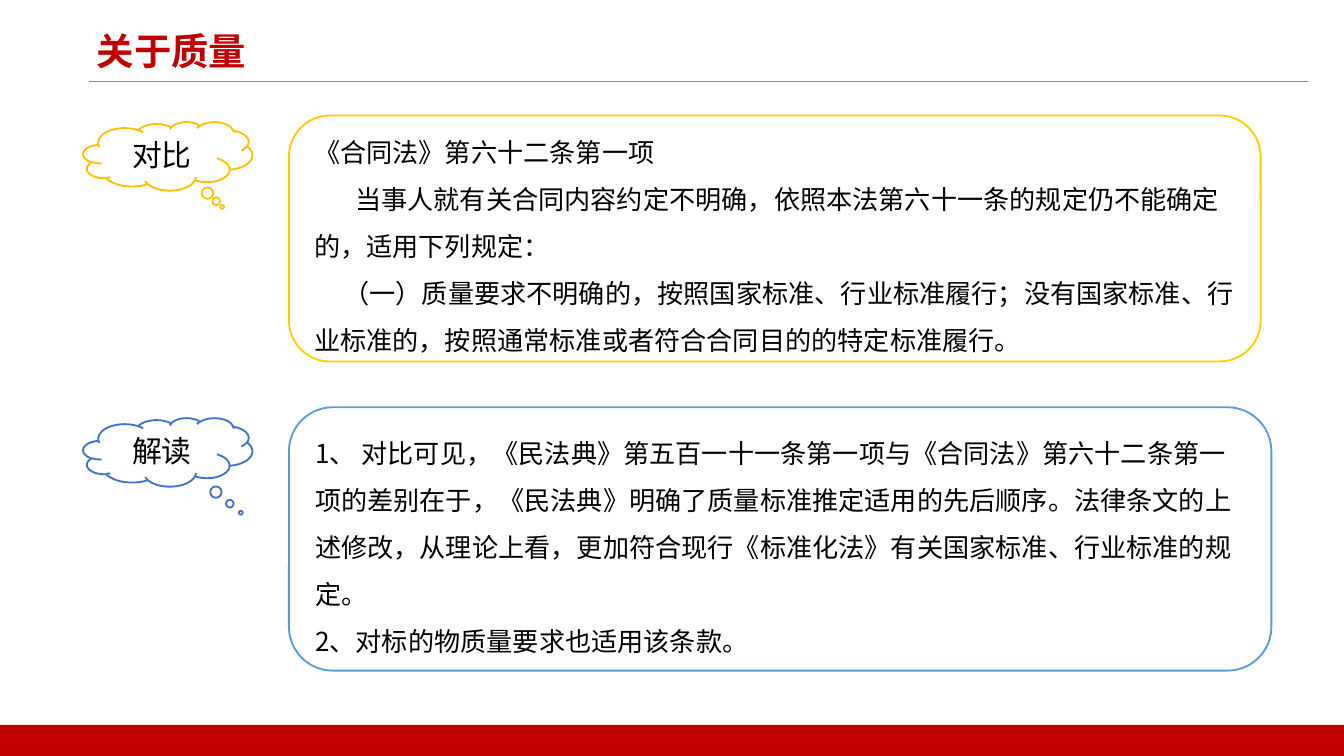
from lxml.etree import SubElement
from pptx import Presentation
from pptx.dml.color import RGBColor
from pptx.enum.shapes import MSO_CONNECTOR, MSO_SHAPE
from pptx.enum.text import MSO_ANCHOR, MSO_AUTO_SIZE, PP_ALIGN
from pptx.oxml.ns import qn
from pptx.util import Pt

FONT = "Noto Sans CJK SC"
RED = RGBColor(0xC0, 0x00, 0x00)
BLACK = RGBColor(0x00, 0x00, 0x00)
WHITE = RGBColor(0xFF, 0xFF, 0xFF)
GRAY = RGBColor(0x8C, 0x8C, 0x8C)
GOLD = RGBColor(0xFF, 0xC0, 0x00)
YELLOW = RGBColor(0xFF, 0xCC, 0x00)
BLUE = RGBColor(0x44, 0x72, 0xC4)
SKY = RGBColor(0x5B, 0x9B, 0xD5)

# Content: paragraphs are (first-line indent, text)
TITLE = "关于质量"
SECTIONS = [
    {
        "label": "对比", "cloud_top": 65.3, "tail": (0.321, 0.74), "cloud_color": GOLD,
        "panel": (61.9, 520.6, 131.8), "panel_color": YELLOW,
        "text": [
            (0, "《合同法》第六十二条第一项"),
            (22, "当事人就有关合同内容约定不明确，依照本法第六十一条的规定仍不能确定的，适用下列规定："),
            (15.7, "（一）质量要求不明确的，按照国家标准、行业标准履行；没有国家标准、行业标准的，"
                   "按照通常标准或者符合合同目的的特定标准履行。"),
        ],
    },
    {
        "label": "解读", "cloud_top": 223.9, "tail": (0.431, 0.884), "cloud_color": BLUE,
        "panel": (218.2, 526.3, 141.1), "panel_color": SKY,
        "text": [
            (0, "1、 对比可见，《民法典》第五百一十一条第一项与《合同法》第六十二条第一项的差别在于，"
                "《民法典》明确了质量标准推定适用的先后顺序。法律条文的上述修改，从理论上看，"
                "更加符合现行《标准化法》有关国家标准、行业标准的规定。"),
            (0, "2、对标的物质量要求也适用该条款。"),
        ],
    },
]
CLOUD_LEFT, CLOUD_WIDTH, CLOUD_HEIGHT = 44.6, 90.7, 36.7
PANEL_LEFT = 154.8


def format_paragraph(para, size, color, align, bold=False):
    para.alignment = align
    for span in para.runs:
        span.font.size = Pt(size)
        span.font.bold = bold
        span.font.name = FONT
        span.font.color.rgb = color
        SubElement(span.font._element, qn("a:ea"), typeface=FONT)


def add_outlined(page, kind, left, top, width, height, fill, line):
    shape = page.shapes.add_shape(kind, Pt(left), Pt(top), Pt(width), Pt(height))
    shape.shadow.inherit = False
    if fill is None:
        shape.fill.background()
    else:
        shape.fill.solid()
        shape.fill.fore_color.rgb = fill
    if line is None:
        shape.line.fill.background()
    else:
        shape.line.color.rgb = line
        shape.line.width = Pt(1)
    shape.text_frame.word_wrap = True
    shape.text_frame.vertical_anchor = MSO_ANCHOR.MIDDLE
    return shape


def add_cloud(page, section):
    cloud = add_outlined(page, MSO_SHAPE.CLOUD_CALLOUT, CLOUD_LEFT, section["cloud_top"],
                         CLOUD_WIDTH, CLOUD_HEIGHT, WHITE, section["cloud_color"])
    cloud.adjustments[0], cloud.adjustments[1] = section["tail"]
    cloud.text_frame.text = section["label"]
    format_paragraph(cloud.text_frame.paragraphs[0], 16, BLACK, PP_ALIGN.CENTER)


def add_panel(page, section):
    top, width, height = section["panel"]
    panel = add_outlined(page, MSO_SHAPE.ROUNDED_RECTANGLE, PANEL_LEFT, top,
                         width, height, None, section["panel_color"])
    frame = panel.text_frame
    frame.text = "\n".join(text for _, text in section["text"])
    for para, (indent, _) in zip(frame.paragraphs, section["text"]):
        para.line_spacing = 1.5
        para._p.get_or_add_pPr().set("indent", str(Pt(indent)))
        format_paragraph(para, 14, BLACK, PP_ALIGN.LEFT)


deck = Presentation()
deck.slide_width, deck.slide_height = Pt(720), Pt(405)
page = deck.slides.add_slide(deck.slide_layouts[5])

# Title and the rule below it
title = page.shapes.title
title.left, title.top, title.width, title.height = Pt(44.6), Pt(14.4), Pt(234), Pt(36.7)
title.text_frame.text = TITLE
title.text_frame.auto_size = MSO_AUTO_SIZE.NONE
title.text_frame.vertical_anchor = MSO_ANCHOR.TOP
title.text_frame.paragraphs[0].line_spacing = 0.9
format_paragraph(title.text_frame.paragraphs[0], 20, RED, PP_ALIGN.LEFT, bold=True)

rule = page.shapes.add_connector(MSO_CONNECTOR.STRAIGHT, Pt(47.5), Pt(43.7), Pt(700.6), Pt(43.7))
rule.line.color.rgb = GRAY
rule.line.width = Pt(0.5)
SubElement(rule._element.spPr, qn("a:effectLst"))

# Footer band
add_outlined(page, MSO_SHAPE.RECTANGLE, 0, 388.3, 720, 16.7, RED, None)

# Label clouds with their text panels
for section in SECTIONS:
    add_cloud(page, section)
    add_panel(page, section)

deck.save("out.pptx")
